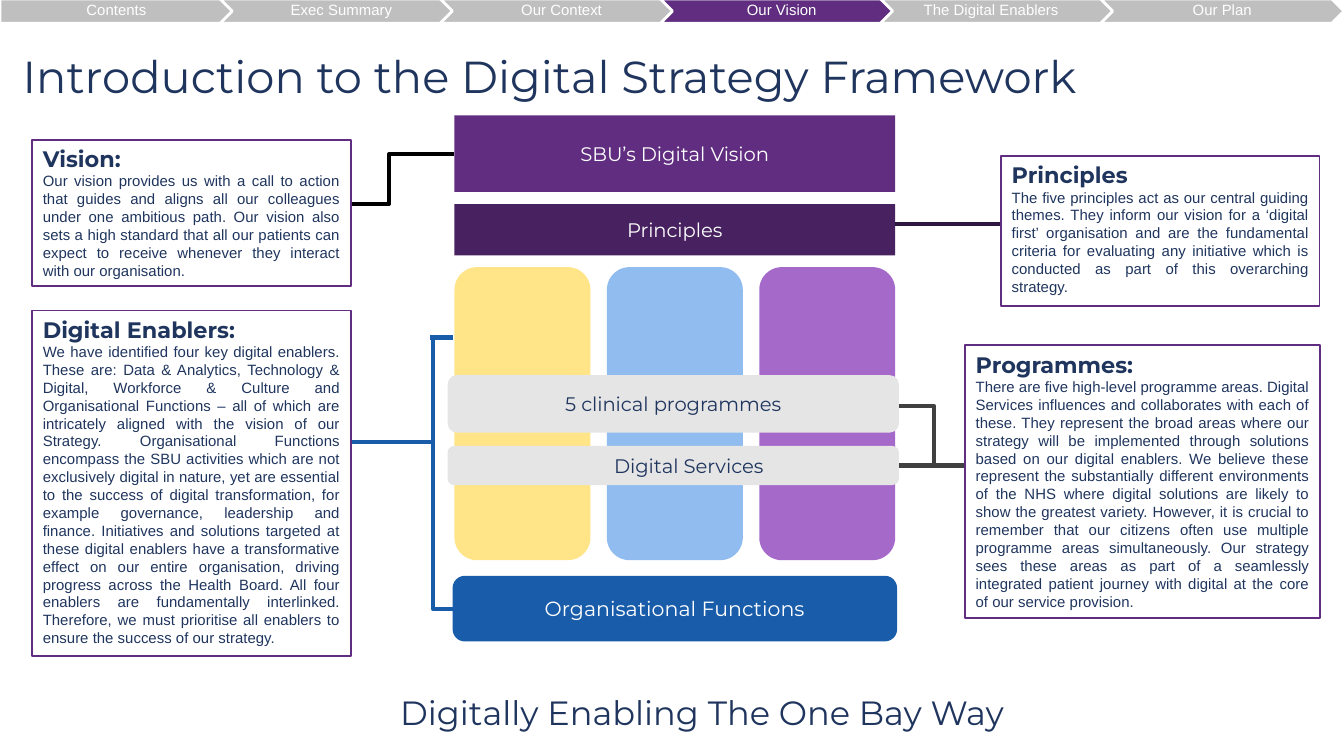
from dataclasses import dataclass

from lxml import etree
from pptx import Presentation
from pptx.dml.color import RGBColor
from pptx.enum.shapes import MSO_CONNECTOR, MSO_SHAPE
from pptx.enum.text import MSO_ANCHOR, MSO_AUTO_SIZE, PP_ALIGN
from pptx.oxml.ns import qn
from pptx.util import Cm, Pt

RECT, ROUND = MSO_SHAPE.RECTANGLE, MSO_SHAPE.ROUNDED_RECTANGLE
PLATE, CHEVRON = MSO_SHAPE.PENTAGON, MSO_SHAPE.CHEVRON
STRAIGHT, ELBOW = MSO_CONNECTOR.STRAIGHT, MSO_CONNECTOR.ELBOW
LEFT, CENTER, JUSTIFY = PP_ALIGN.LEFT, PP_ALIGN.CENTER, PP_ALIGN.JUSTIFY
TOP, MIDDLE = MSO_ANCHOR.TOP, MSO_ANCHOR.MIDDLE
GROW = MSO_AUTO_SIZE.SHAPE_TO_FIT_TEXT

HEAD, BODY = "Montserrat", "Arial"
COLORS = {
    "white": "FFFFFF", "navy": "1F355E", "purple": "602D80", "plum": "482260",
    "dark": "301740", "lilac": "A569CA", "yellow": "FFE588", "sky": "91BCEF",
    "blue": "195CAA", "pale": "E5E5E5", "grey": "BFBFBF", "slate": "404040",
    "black": "000000",
}


@dataclass
class Box:
    """A filled shape; lengths in centimetres."""
    x: float
    y: float
    w: float
    h: float
    fill: str
    kind: int = RECT
    text: str = ""
    ink: str = "white"
    size: float = 10.5
    edge: str = ""
    weight: float = 1


@dataclass
class Panel:
    x: float
    y: float
    w: float
    h: float
    title: str
    text: str


@dataclass
class Link:
    x1: float
    y1: float
    x2: float
    y2: float
    color: str
    weight: float = 2.25
    kind: int = STRAIGHT
    corner: bool = False  # an elbow with a single turn


def rgb(name: str) -> RGBColor:
    return RGBColor.from_string(COLORS[name])


def apply(target, fmt: dict) -> None:
    for key, val in fmt.items():
        setattr(target, key, val)


def set_frame(shape, anchor, pads: tuple) -> None:
    names = ("margin_left", "margin_top", "margin_right", "margin_bottom")
    fmt = {name: Cm(pad) for name, pad in zip(names, pads)}
    apply(shape.text_frame, {**fmt, "word_wrap": True, "vertical_anchor": anchor})


def write(para, text: str, face: str, size: float, ink: str, align, bold=False) -> None:
    para.alignment = align
    run = para.add_run()
    run.text = text
    apply(run.font, {"name": face, "size": Pt(size), "bold": bold})
    run.font.color.rgb = rgb(ink)


def draw_box(slide, box: Box, face=HEAD, pads=(0.08,) * 4):
    shape = slide.shapes.add_shape(box.kind, Cm(box.x), Cm(box.y), Cm(box.w), Cm(box.h))
    shape.shadow.inherit = False
    shape.fill.solid()
    shape.fill.fore_color.rgb = rgb(box.fill)
    if box.edge:
        shape.line.color.rgb = rgb(box.edge)
        shape.line.width = Pt(box.weight)
    else:
        shape.line.fill.background()
    set_frame(shape, MIDDLE, pads)
    if box.text:
        write(shape.text_frame.paragraphs[0], box.text, face, box.size, box.ink, CENTER)
    return shape


def draw_panel(slide, pan: Panel) -> None:
    shape = draw_box(slide, Box(pan.x, pan.y, pan.w, pan.h, "white", edge="purple"))
    set_frame(shape, TOP, (0.2, 0.1, 0.2, 0.1))
    frame = shape.text_frame
    frame.auto_size = GROW
    write(frame.paragraphs[0], pan.title, HEAD, 12, "navy", LEFT, True)
    write(frame.add_paragraph(), pan.text, BODY, 8, "navy", JUSTIFY)


def draw_link(slide, link: Link):
    line = slide.shapes.add_connector(
        link.kind, Cm(link.x1), Cm(link.y1), Cm(link.x2), Cm(link.y2))
    line.line.color.rgb = rgb(link.color)
    line.line.width = Pt(link.weight)
    props = line._element.spPr
    if link.corner:
        props.find(qn("a:prstGeom")).set("prst", "bentConnector2")
    etree.SubElement(props, qn("a:effectLst"))
    return line


def draw_label(slide, x, y, w, h, text: str, size: float, align) -> None:
    label = slide.shapes.add_textbox(Cm(x), Cm(y), Cm(w), Cm(h))
    set_frame(label, MIDDLE, (0.18, 0.1, 0.18, 0.1))
    write(label.text_frame.paragraphs[0], text, HEAD, size, "navy", align)


MID, WIDE = 8.59, 8.33  # left edge and width of the framework
BLOCKS = [
    Box(MID, 2.18, WIDE, 1.45, "purple", text="SBU’s Digital Vision"),
    Box(MID, 3.86, WIDE, 0.97, "plum", text="Principles"),
    *[Box(MID + 2.88 * i, 5.05, 2.57, 5.54, hue, ROUND)
      for i, hue in enumerate(("yellow", "sky", "lilac"))],
    Box(8.46, 7.09, 8.53, 1.09, "pale", ROUND, "5 clinical programmes", "navy"),
    Box(MID, 10.92, WIDE, 1.17, "blue", ROUND, "Organisational Functions",
        size=11, edge="blue", weight=2),
]
STRIP = Box(8.46, 8.43, 8.53, 0.74, "pale", ROUND)
TAG = Box(10.72, 8.46, 4.6, 0.69, "pale", ROUND, "Digital Services", "navy")

LINKS = [
    Link(6.12, 3.86, MID, 2.91, "black", 2, ELBOW),
    Link(16.92, 4.24, 19.08, 4.24, "dark"),
    Link(MID, 11.51, 8.18, 6.38, "blue", kind=ELBOW, corner=True),
    Link(8.13, 6.38, 8.56, 6.38, "blue"),
    Link(6.65, 8.36, 8.18, 8.36, "blue"),
    Link(16.99, 7.67, 17.65, 8.8, "slate", kind=ELBOW, corner=True),
]
STUB = Link(16.99, 8.8, 18.42, 8.8, "slate")

PANELS = [
    Panel(0.61, 5.87, 6.02, 6.53, "Digital Enablers:",
          "We have identified four key digital enablers. These are: Data & Analytics, "
          "Technology & Digital, Workforce & Culture and Organisational Functions – all of "
          "which are intricately aligned with the vision of our Strategy. Organisational "
          "Functions encompass the SBU activities which are not exclusively digital in "
          "nature, yet are essential to the success of digital transformation, for example "
          "governance, leadership and finance. Initiatives and solutions targeted at these "
          "digital enablers have a transformative effect on our entire organisation, driving "
          "progress across the Health Board. All four enablers are fundamentally interlinked. "
          "Therefore, we must prioritise all enablers to ensure the success of our strategy."),
    Panel(0.61, 2.64, 6.02, 2.77, "Vision:",
          "Our vision provides us with a call to action that guides and aligns all our "
          "colleagues under one ambitious path. Our vision also sets a high standard that all "
          "our patients can expect to receive whenever they interact with our organisation."),
    Panel(18.92, 2.95, 6.02, 2.84, "Principles",
          "The five principles act as our central guiding themes. They inform our vision for "
          "a ‘digital first’ organisation and are the fundamental criteria for evaluating any "
          "initiative which is conducted as part of this overarching strategy."),
    Panel(18.24, 6.53, 6.71, 5.16, "Programmes:",
          "There are five high-level programme areas. Digital Services influences and "
          "collaborates with each of these. They represent the broad areas where our strategy "
          "will be implemented through solutions based on our digital enablers. We believe "
          "these represent the substantially different environments of the NHS where digital "
          "solutions are likely to show the greatest variety. However, it is crucial to "
          "remember that our citizens often use multiple programme areas simultaneously. Our "
          "strategy sees these areas as part of a seamlessly integrated patient journey with "
          "digital at the core of our service provision."),
]
TABS = [("Contents", 4.52), ("Exec Summary", 5), ("Our Context", 5),
        ("Our Vision", 5), ("The Digital Enablers", 4.6), ("Our Plan", 4.6)]
ACTIVE = "Our Vision"


def main() -> None:
    deck = Presentation()
    deck.slide_width, deck.slide_height = Cm(25.4), Cm(14.29)
    slide = deck.slides.add_slide(deck.slide_layouts[6])

    # Framework in the centre
    for box in BLOCKS:
        draw_box(slide, box)
    strip = draw_box(slide, STRIP)
    draw_box(slide, TAG)

    # Lines to the notes
    for link in LINKS:
        draw_link(slide, link)
    draw_link(slide, STUB).begin_connect(strip, 3)

    # Notes on both sides
    for pan in PANELS:
        draw_panel(slide, pan)

    # Title and closing line
    draw_label(slide, 0.25, 0.43, 24.84, 1.98,
               "Introduction to the Digital Strategy Framework", 24, LEFT)
    draw_label(slide, 6.27, 13, 14, 0.91, "Digitally Enabling The One Bay Way", 18, CENTER)

    # Navigation bar
    for i, (name, width) in enumerate(TABS):
        fill = "purple" if name == ACTIVE else "grey"
        pad = 0.51 if i in (0, len(TABS) - 1) else 0.1
        tab = Box(4.16 * i, -0.02, width, 0.46, fill, CHEVRON if i else PLATE,
                  name, size=8, edge="white", weight=1.5)
        shape = draw_box(slide, tab, BODY, (pad, 0.05, 0.51, 0.05))
        shape.text_frame.paragraphs[0].line_spacing = 0.9

    deck.save("out.pptx")


if __name__ == "__main__":
    main()
